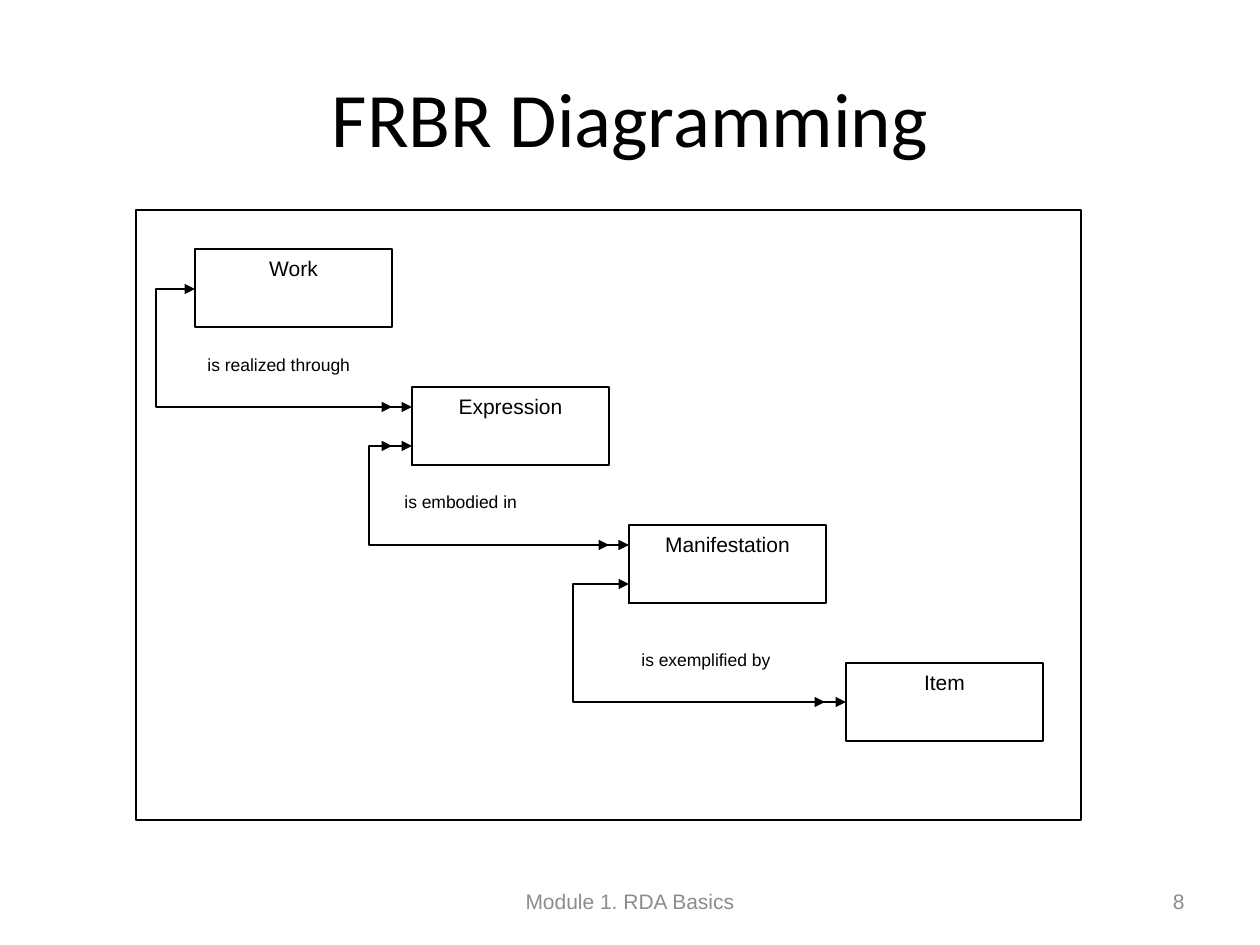
from lxml.etree import SubElement
from pptx import Presentation
from pptx.dml.color import RGBColor
from pptx.enum.shapes import MSO_CONNECTOR, MSO_SHAPE
from pptx.enum.text import MSO_ANCHOR, PP_ALIGN
from pptx.oxml.ns import qn
from pptx.util import Emu, Pt

PIXELS_PER_INCH = 126
BLACK = RGBColor(0, 0, 0)
WHITE = RGBColor(255, 255, 255)
GRAY = RGBColor(0x8C, 0x8C, 0x8C)

BOX_WIDTH, BOX_HEIGHT = 197, 78
FIRST_LEFT, FIRST_TOP = 195, 249
STEP_X, STEP_Y = 217, 138
STUB = 20

ENTITIES = ["Work", "Expression", "Manifestation", "Item"]
LINKS = [(289, 407, 156), (446, 545, 369), (584, 702, 573)]
LABELS = [
    ("is realized through", 195, 348),
    ("is embodied in", 392, 485),
    ("is exemplified by", 629, 643),
]
STUB_ARROWS = [(392, 446), (609, 545), (392, 407), (825, 702)]
EDGE_STUBS = [(412, 387), (412, 446), (629, 525), (629, 564), (629, 584)]


def px(*lengths):
    return [Emu(round(length * 914400 / PIXELS_PER_INCH)) for length in lengths]


def write(shape, text, size, align, anchor, font="Arial", color=BLACK):
    frame = shape.text_frame
    frame.word_wrap = True
    frame.vertical_anchor = anchor
    paragraph = frame.paragraphs[0]
    paragraph.text = text
    paragraph.alignment = align
    paragraph.font.name = font
    paragraph.font.size = Pt(size)
    paragraph.font.color.rgb = color


def add_text(slide, bounds, text, size, align, font="Arial", color=BLACK):
    shape = slide.shapes.add_textbox(*px(*bounds))
    write(shape, text, size, align, MSO_ANCHOR.MIDDLE, font, color)


def add_rectangle(slide, bounds, filled=True, outlined=True):
    shape = slide.shapes.add_shape(MSO_SHAPE.RECTANGLE, *px(*bounds))
    shape.shadow.inherit = False
    if filled:
        shape.fill.solid()
        shape.fill.fore_color.rgb = WHITE
    else:
        shape.fill.background()
    if outlined:
        shape.line.color.rgb = BLACK
        shape.line.width = Pt(0.75)
    else:
        shape.line.fill.background()
    return shape


def add_line(slide, points, kind=MSO_CONNECTOR.STRAIGHT, arrow_ends=()):
    connector = slide.shapes.add_connector(kind, *px(*points))
    connector.line.color.rgb = BLACK
    connector.line.width = Pt(0.75)
    properties = connector._element.spPr
    SubElement(properties, qn("a:effectLst"))
    outline = properties.find(qn("a:ln"))
    for end in arrow_ends:
        SubElement(outline, qn(end), type="triangle")
    return connector


def add_link(slide, start, end, rail):
    connector = add_line(slide, (*start, *end), MSO_CONNECTOR.ELBOW,
                         ("a:headEnd", "a:tailEnd"))
    geometry = connector._element.spPr.find(qn("a:prstGeom"))
    bend = round(100000 * (rail - start[0]) / (end[0] - start[0]))
    SubElement(geometry.find(qn("a:avLst")), qn("a:gd"),
               name="adj1", fmla=f"val {bend}")


def add_diagram(slide):
    add_rectangle(slide, (136, 210, 945, 610), filled=False)
    for index, entity in enumerate(ENTITIES):
        box = add_rectangle(slide, (FIRST_LEFT + index * STEP_X,
                                    FIRST_TOP + index * STEP_Y,
                                    BOX_WIDTH, BOX_HEIGHT))
        write(box, entity, 12, PP_ALIGN.CENTER, MSO_ANCHOR.TOP)
    for index, (top, bottom, rail) in enumerate(LINKS):
        left = FIRST_LEFT + index * STEP_X
        add_link(slide, (left, top), (left + STEP_X, bottom), rail)
    for text, left, top in LABELS:
        label = add_rectangle(slide, (left, top, BOX_WIDTH, 39), outlined=False)
        write(label, text, 10, PP_ALIGN.LEFT, MSO_ANCHOR.TOP)
    for x, y in EDGE_STUBS:
        add_line(slide, (x, y, x, y + STUB))
    for x, y in STUB_ARROWS:
        add_line(slide, (x - STUB, y, x, y), arrow_ends=("a:tailEnd",))


def main():
    presentation = Presentation()
    presentation.slide_width, presentation.slide_height = px(1260, 945)
    slide = presentation.slides.add_slide(presentation.slide_layouts[6])
    add_text(slide, (63, 38, 1134, 157), "FRBR Diagramming", 44,
             PP_ALIGN.CENTER, font="Calibri")
    add_diagram(slide)
    add_text(slide, (430, 876, 400, 50), "Module 1. RDA Basics", 12,
             PP_ALIGN.CENTER, color=GRAY)
    add_text(slide, (903, 876, 294, 50), "8", 12, PP_ALIGN.RIGHT, color=GRAY)
    presentation.save("out.pptx")


if __name__ == "__main__":
    main()
